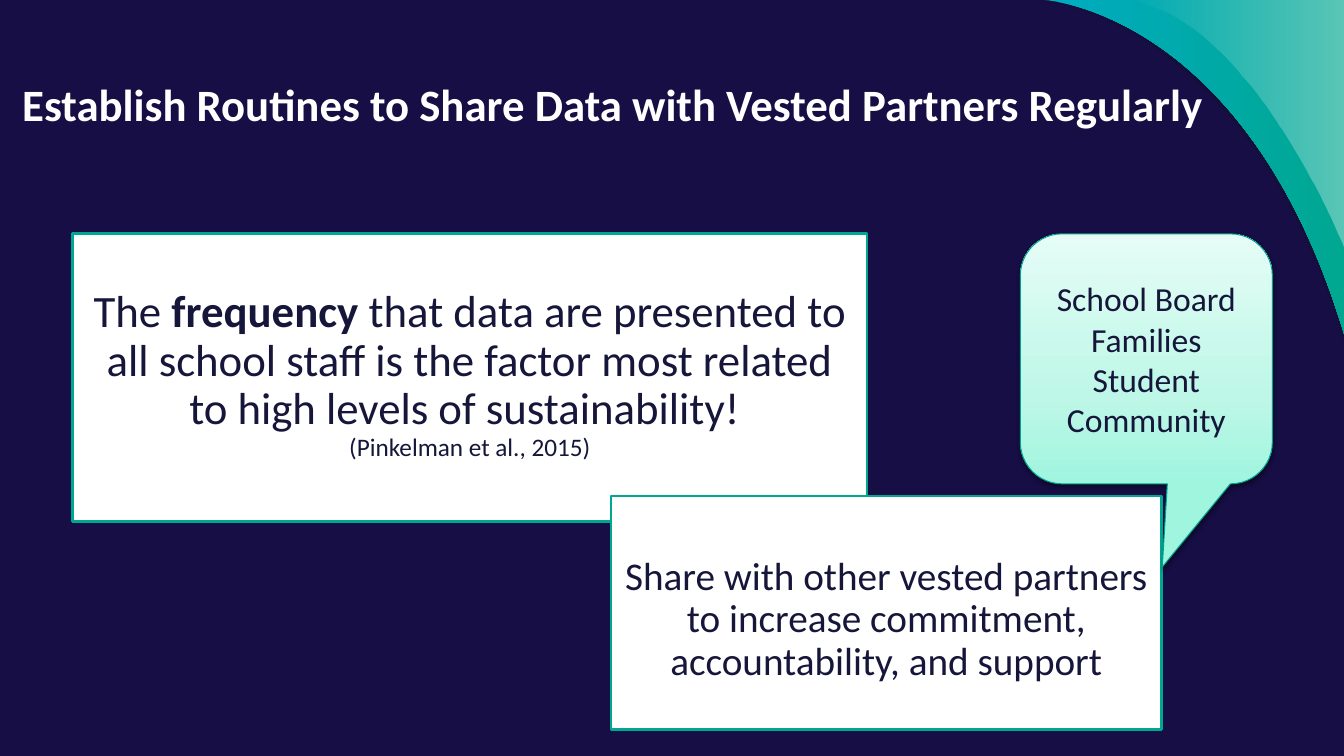
"""Build the slide on sharing data routinely with vested partners."""
from dataclasses import dataclass

from lxml import etree
from pptx import Presentation
from pptx.dml.color import RGBColor
from pptx.enum.shapes import MSO_SHAPE
from pptx.enum.text import MSO_ANCHOR, MSO_AUTO_SIZE, PP_ALIGN
from pptx.oxml import parse_xml
from pptx.oxml.ns import qn
from pptx.util import Inches, Pt

RECT, CALLOUT = MSO_SHAPE.RECTANGLE, MSO_SHAPE.ROUNDED_RECTANGULAR_CALLOUT
TOP, MIDDLE, BOTTOM = MSO_ANCHOR.TOP, MSO_ANCHOR.MIDDLE, MSO_ANCHOR.BOTTOM
LEFT, CENTER, FIXED = PP_ALIGN.LEFT, PP_ALIGN.CENTER, MSO_AUTO_SIZE.NONE
NS = "http://schemas.openxmlformats.org/drawingml/2006/main"


@dataclass(frozen=True)
class Theme:
    font: str = "Calibri"
    back: str = "160E44"
    ink: str = "15163A"
    white: str = "FFFFFF"
    edge: str = "00A791"
    rim: str = "00A38E"
    head: int = 32
    lead: int = 32
    share: int = 28
    group: int = 24
    cite: int = 18


T = Theme()
WIDE, HIGH = 13.33, 7.5

TITLE = "Establish Routines to Share Data with Vested Partners Regularly"
LEAD = [
    ([("The ", False), ("frequency", True),
      (" that data are presented to all school staff is the factor most"
       " related to high levels of sustainability! ", False)], T.lead),
    ([("(Pinkelman et al., 2015)", False)], T.cite),
]
SHARE = [([("Share with other vested partners to increase commitment,"
            " accountability, and support", False)], T.share)]
GROUPS = [([(line, False)], T.group)
          for line in ("School Board Families", "Student Community")]

PANELS = [
    ((0.72, 2.32, 7.88, 2.85), LEAD, 0.59),
    ((6.06, 4.92, 5.46, 2.32), SHARE, 0.46),
]
BUBBLE = (10.12, 2.32, 2.5, 2.48)
MINT = [(0, "A0F5DF", 100), (35, "BEF7E7", 100), (100, "E5FDF6", 100)]
ARCS = [
    (((10.29, 0), (10.29, 0), (12.35, 0.11), (WIDE, 3.39)),
     [(0, "12102F", 54)]),
    (((10.36, 0), (10.36, 0), (12.37, 0.11), (WIDE, 3.31)),
     [(0, "00ACC2", 100), (100, T.edge, 100)]),
    (((11.16, 0), (12.41, 0.15), (WIDE, 2.45), (WIDE, 2.45)),
     [(0, T.white, 0), (100, T.white, 36)]),
]


def rgb(code):
    return RGBColor.from_string(code)


def tint(code, alpha):
    return (f'<a:srgbClr val="{code}"><a:alpha val="{alpha * 1000}"/>'
            '</a:srgbClr>')


def blend(shape, stops, angle):
    if len(stops) == 1:
        body = f'<a:solidFill xmlns:a="{NS}">{tint(*stops[0][1:])}</a:solidFill>'
    else:
        marks = "".join(f'<a:gs pos="{pos * 1000}">{tint(code, alpha)}</a:gs>'
                        for pos, code, alpha in stops)
        body = (f'<a:gradFill xmlns:a="{NS}"><a:gsLst>{marks}</a:gsLst>'
                f'<a:lin ang="{angle * 60000}" scaled="0"/></a:gradFill>')
    shape.fill.solid()
    props = shape._element.spPr
    props.replace(props.find(qn("a:solidFill")), parse_xml(body))


def add_arc(slide, ends, stops):
    dots = [tuple(map(Inches, dot)) for dot in ends]
    pen = slide.shapes.build_freeform(*dots[0])
    pen.add_line_segments(dots[1:] + [(Inches(WIDE), 0)], close=True)
    shape = pen.convert_to_shape()
    legs = list(shape._element.spPr.iter(qn("a:lnTo")))[:3]
    bend = etree.Element(qn("a:cubicBezTo"))
    legs[0].addprevious(bend)
    for leg in legs:
        bend.append(leg[0])
        leg.getparent().remove(leg)
    shape.shadow.inherit = False
    shape.line.fill.background()
    blend(shape, stops, 0)


def add_box(slide, kind, place, edge, width):
    shape = slide.shapes.add_shape(kind, *map(Inches, place))
    shape.shadow.inherit = False
    shape.fill.solid()
    shape.fill.fore_color.rgb = rgb(T.white)
    shape.line.color.rgb = rgb(edge)
    shape.line.width = Pt(width)
    return shape


def style(para, size, color, bold=None):
    para.font.name = T.font
    para.font.size = Pt(size)
    para.font.color.rgb = rgb(color)
    para.font.bold = bold


def write(shape, lines, anchor, pitch=None):
    frame = shape.text_frame
    frame.word_wrap = True
    frame.vertical_anchor = anchor
    for i, (runs, size) in enumerate(lines):
        para = frame.add_paragraph() if i else frame.paragraphs[0]
        para.alignment = CENTER
        para.line_spacing = pitch
        style(para, size, T.ink)
        for text, bold in runs:
            run = para.add_run()
            run.text = text
            if bold:
                run.font.bold = True


def add_bubble(slide):
    shape = add_box(slide, CALLOUT, BUBBLE, T.rim, 0.75)
    for i, value in enumerate((0.063, 0.833, 0.167)):
        shape.adjustments[i] = value
    blend(shape, MINT, 270)
    effects = shape._element.spPr.find(qn("a:effectLst"))
    cast = etree.SubElement(effects, qn("a:outerShdw"), blurRad=str(Pt(3.1)),
                            dist=str(Pt(1.6)), dir="5400000", rotWithShape="0")
    black = etree.SubElement(cast, qn("a:srgbClr"), val="000000")
    etree.SubElement(black, qn("a:alpha"), val="38000")
    write(shape, GROUPS, MIDDLE)


def add_title(slide):
    title = slide.shapes.title
    title.left, title.top, title.width, title.height = map(
        Inches, (0.12, 0.71, 12.5, 0.64))
    frame = title.text_frame
    frame.text = TITLE
    frame.word_wrap = True
    frame.auto_size = FIXED
    frame.vertical_anchor = TOP
    para = frame.paragraphs[0]
    para.alignment = LEFT
    style(para, T.head, T.white, True)
    slide.shapes._spTree.append(title._element)


def main():
    deck = Presentation()
    deck.slide_width, deck.slide_height = Inches(WIDE), Inches(HIGH)
    slide = deck.slides.add_slide(deck.slide_layouts[5])
    slide.background.fill.solid()
    slide.background.fill.fore_color.rgb = rgb(T.back)
    for ends, stops in ARCS:
        add_arc(slide, ends, stops)
    for place, lines, gap in PANELS:
        panel = add_box(slide, RECT, place, T.edge, 2)
        panel.text_frame.margin_bottom = Inches(gap)
        write(panel, lines, BOTTOM, 0.9)
    add_bubble(slide)
    add_title(slide)
    deck.save("out.pptx")


if __name__ == "__main__":
    main()
